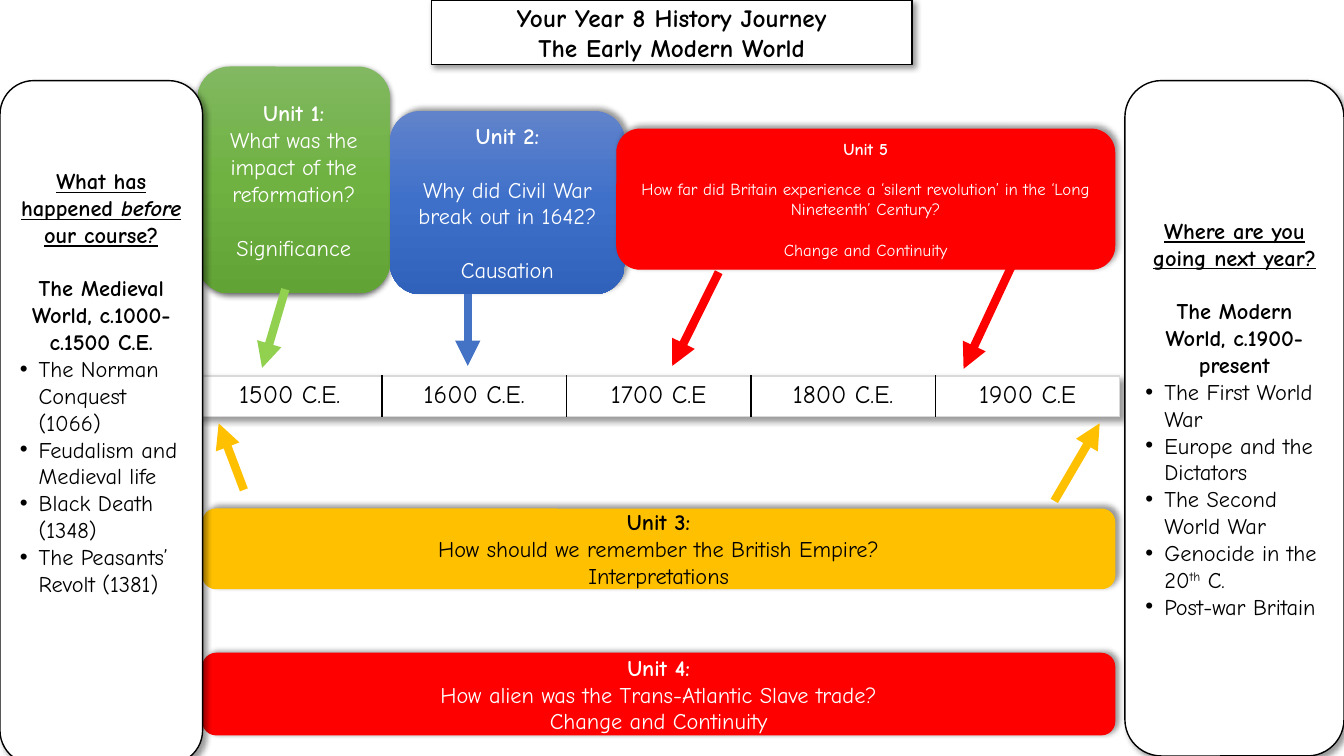
from dataclasses import dataclass

from pptx import Presentation
from pptx.dml.color import RGBColor
from pptx.enum.shapes import MSO_CONNECTOR as Connector, MSO_SHAPE as Shape
from pptx.enum.text import MSO_ANCHOR as Anchor, MSO_AUTO_SIZE as AutoSize, PP_ALIGN as Align
from pptx.oxml import parse_xml
from pptx.oxml.ns import qn
from pptx.util import Pt
from copy import deepcopy

FONT = "Comic Neue"
NAMESPACE = 'xmlns:a="http://schemas.openxmlformats.org/drawingml/2006/main"'
COLOURS = {
    "black": "000000", "white": "FFFFFF", "red": "FF0000", "gold": "FFC000",
    "blue": "4472C4", "lime": "92D050", "grey": "D9D9D9",
    "green top": "81B861", "green middle": "6FB242", "green bottom": "62A336",
    "blue top": "6183CB", "blue middle": "3E70CA", "blue bottom": "3062BB",
}
GREEN_BLEND = ("green top", "green middle", "green bottom")
BLUE_BLEND = ("blue top", "blue middle", "blue bottom")


@dataclass(frozen=True)
class Piece:
    """A run of text with its own emphasis."""
    text: str
    bold: bool = False
    underline: bool = False
    italic: bool = False
    raised: bool = False


@dataclass(frozen=True)
class Line:
    """A paragraph, optionally bulleted or set apart by a gap of one line."""
    pieces: tuple[Piece, ...]
    gap: bool = False
    bullet: bool = False


@dataclass(frozen=True)
class Shadow:
    """An outer shadow: opacity in percent, blur and distance in points, angle in degrees."""
    opacity: int = 40
    blur: float = 4
    distance: float = 3
    angle: int = 315


PANEL_SHADOW = Shadow(angle=45)


@dataclass(frozen=True)
class Card:
    """A rounded box with text."""
    box: tuple[float, float, float, float]
    fill: tuple[str, ...]
    lines: tuple[Line, ...]
    ink: str = "white"
    outline: str | None = None
    weight: float = 0.75
    size: int = 16
    shadow: Shadow = Shadow()
    bottom_inset: float = 3.6


@dataclass(frozen=True)
class Arrow:
    """An arrow from one point to another."""
    start: tuple[float, float]
    end: tuple[float, float]
    colour: str


def plain(text: str, gap: bool = False) -> Line:
    """Return a regular paragraph."""
    return Line((Piece(text),), gap)


def bold(text: str, gap: bool = False, underline: bool = False) -> Line:
    """Return a bold paragraph."""
    return Line((Piece(text, True, underline),), gap)


def bullets(*texts: str) -> tuple[Line, ...]:
    """Return one bulleted paragraph for each text."""
    return tuple(Line((Piece(text),), bullet=True) for text in texts)


TITLE = Card((308, 0, 343.5, 46), ("white",),
             (bold("Your Year 8 History Journey"), bold("The Early Modern World")),
             "black", "black", 1, 18, PANEL_SHADOW)
CARDS = (
    Card((803.5, 57.6, 156.5, 482.4), ("white",),
         (bold("Where are you going next year?", underline=True),
          bold("The Modern World, c.1900-present", gap=True),
          *bullets("The First World War", "Europe and the Dictators", "The Second World War"),
          Line((Piece("Genocide in the 20"), Piece("th", raised=True), Piece(" C.")), bullet=True),
          *bullets("Post-war Britain")),
         "black", "black", 1, shadow=PANEL_SHADOW),
    Card((141.1, 47.5, 137.5, 162), GREEN_BLEND,
         (bold("Unit 1:"), plain("What was the impact of the reformation?"),
          plain("Significance", gap=True)), shadow=Shadow(63, 4.5, 1.5, 90)),
    Card((278.6, 79.2, 167.8, 131), BLUE_BLEND,
         (bold("Unit 2:"), plain("Why did Civil War break out in 1642?", gap=True),
          plain("Causation", gap=True))),
    Card((144.7, 363.6, 651.6, 56.9), ("gold",),
         (bold("Unit 3:"), plain("How should we remember the British Empire?"),
          plain("Interpretations")), "black", "gold"),
    Card((144.7, 466.6, 651.6, 58.3), ("red",),
         (bold("Unit 4:"), plain("How alien was the Trans-Atlantic Slave trade?"),
          plain("Change and Continuity")), outline="red"),
    Card((440.6, 92.2, 355.7, 100.1), ("red",),
         (bold("Unit 5"),
          plain("How far did Britain experience a ‘silent revolution’ in the "
                "‘Long Nineteenth’ Century?", gap=True),
          plain("Change and Continuity", gap=True)), outline="red", size=12),
    Card((0, 57.6, 144.7, 488.2), ("white",),
         (Line((Piece("What has happened ", True, True), Piece("before", True, True, True),
                Piece(" our course?", True, True))),
          bold("The Medieval World, c.1000-c.1500 C.E.", gap=True),
          *bullets("The Norman Conquest (1066)", "Feudalism and Medieval life",
                   "Black Death (1348)", "The Peasants’ Revolt (1381)")),
         "black", "black", 1, shadow=PANEL_SHADOW, bottom_inset=61.2),
)
ARROWS = (
    Arrow((334.1, 210.2), (334.1, 261.4), "blue"),
    Arrow((203.8, 206.6), (187.2, 262.8), "lime"),
    Arrow((174.2, 349.9), (156.2, 302.4), "gold"),
    Arrow((753.1, 357.8), (785.5, 302.4), "gold"),
    Arrow((513.4, 194.4), (480.2, 261.4), "red"),
    Arrow((722.9, 189.4), (688.3, 263.5), "red"),
)
CENTURIES = ("1500 C.E.", "1600 C.E.", "1700 C.E", "1800 C.E.", "1900 C.E")


def colour(name: str) -> RGBColor:
    """Look up a named colour."""
    return RGBColor.from_string(COLOURS[name])


def shadow_element(shadow: Shadow):
    """Build the XML of an outer shadow."""
    return parse_xml(
        f'<a:outerShdw {NAMESPACE} blurRad="{Pt(shadow.blur)}" dist="{Pt(shadow.distance)}" '
        f'dir="{shadow.angle * 60000}" rotWithShape="0"><a:srgbClr val="{COLOURS["black"]}">'
        f'<a:alpha val="{shadow.opacity * 1000}"/></a:srgbClr></a:outerShdw>')


def write_line(paragraph, line: Line, size: int, ink: str) -> None:
    """Fill a paragraph run by run."""
    paragraph.alignment = Align.LEFT if line.bullet else Align.CENTER
    paragraph.line_spacing = 1.0
    paragraph.space_before = Pt(size * 1.2 if line.gap else 0)
    if line.bullet:
        properties = paragraph._p.get_or_add_pPr()
        properties.set("marL", str(Pt(13.5)))
        properties.set("indent", str(-Pt(13.5)))
        properties.append(parse_xml(f'<a:buFont {NAMESPACE} typeface="Arial"/>'))
        properties.append(parse_xml(f'<a:buChar {NAMESPACE} char="•"/>'))
    for piece in line.pieces:
        run = paragraph.add_run()
        run.text = piece.text
        font = run.font
        font.name, font.size = FONT, Pt(size)
        font.bold, font.underline, font.italic = piece.bold, piece.underline, piece.italic
        font.color.rgb = colour(ink)
        if piece.raised:
            run._r.get_or_add_rPr().set("baseline", "30000")


def paint(shape, names: tuple[str, ...]) -> None:
    """Fill a shape with one colour or a vertical blend of three."""
    if len(names) == 1:
        shape.fill.solid()
        shape.fill.fore_color.rgb = colour(names[0])
        return
    shape.fill.gradient()
    shape.fill.gradient_angle = 270
    stops = next(shape.element.iter(qn("a:gsLst")))
    stops.insert(1, deepcopy(stops[0]))
    for stop, name, position in zip(shape.fill.gradient_stops, names, (0, 0.5, 1)):
        stop.color.rgb = colour(name)
        stop.position = position


def dress(shape, card: Card) -> None:
    """Format a shape and write its text as the card says."""
    paint(shape, card.fill)
    if card.outline:
        shape.line.color.rgb = colour(card.outline)
        shape.line.width = Pt(card.weight)
    else:
        shape.line.fill.background()
    shape.shadow.inherit = False
    next(shape.element.iter(qn("a:effectLst"))).append(shadow_element(card.shadow))
    frame = shape.text_frame
    frame.word_wrap, frame.auto_size = True, AutoSize.NONE
    frame.vertical_anchor = Anchor.MIDDLE
    frame.margin_bottom = Pt(card.bottom_inset)
    for index, line in enumerate(card.lines):
        paragraph = frame.add_paragraph() if index else frame.paragraphs[0]
        write_line(paragraph, line, card.size, card.ink)


def add_title(slide) -> None:
    """Move and format the title placeholder as a rounded box."""
    title = slide.shapes.title
    title.left, title.top, title.width, title.height = map(Pt, TITLE.box)
    title.element.spPr.append(parse_xml(
        f'<a:prstGeom {NAMESPACE} prst="roundRect"><a:avLst/></a:prstGeom>'))
    dress(title, TITLE)


def add_arrow(slide, arrow: Arrow) -> None:
    """Draw a thick arrow."""
    connector = slide.shapes.add_connector(
        Connector.STRAIGHT, *map(Pt, arrow.start + arrow.end))
    connector.line.color.rgb = colour(arrow.colour)
    connector.line.width = Pt(6)
    connector.line._get_or_add_ln().append(parse_xml(f'<a:tailEnd {NAMESPACE} type="triangle"/>'))
    connector.element.spPr.append(parse_xml(f"<a:effectLst {NAMESPACE}/>"))


def add_timeline(slide) -> None:
    """Draw the row of centuries."""
    last = len(CENTURIES) - 1
    table = slide.shapes.add_table(
        1, len(CENTURIES), Pt(141.1), Pt(268.6), Pt(658.8), Pt(28.8)).table
    table.first_row = table.horz_banding = False
    effects = parse_xml(f"<a:effectLst {NAMESPACE}/>")
    effects.append(shadow_element(PANEL_SHADOW))
    next(table._tbl.iter(qn("a:tblPr"))).insert(0, effects)
    for index, century in enumerate(CENTURIES):
        cell = table.cell(0, index)
        edges = {"L": "black" if index else "grey", "R": "black" if index < last else "grey",
                 "T": "grey", "B": "grey"}
        for side, name in edges.items():
            cell._tc.get_or_add_tcPr().append(parse_xml(
                f'<a:ln{side} {NAMESPACE} w="{Pt(1)}"><a:solidFill>'
                f'<a:srgbClr val="{COLOURS[name]}"/></a:solidFill></a:ln{side}>'))
        paint(cell, ("white",))
        write_line(cell.text_frame.paragraphs[0], plain(century), 18, "black")


def main() -> None:
    """Build and save the slide."""
    presentation = Presentation()
    presentation.slide_width, presentation.slide_height = Pt(960), Pt(540)
    slide = presentation.slides.add_slide(presentation.slide_layouts[5])
    add_title(slide)
    add_timeline(slide)
    for card in CARDS:
        dress(slide.shapes.add_shape(Shape.ROUNDED_RECTANGLE, *map(Pt, card.box)), card)
    for arrow in ARROWS:
        add_arrow(slide, arrow)
    presentation.save("out.pptx")


if __name__ == "__main__":
    main()
